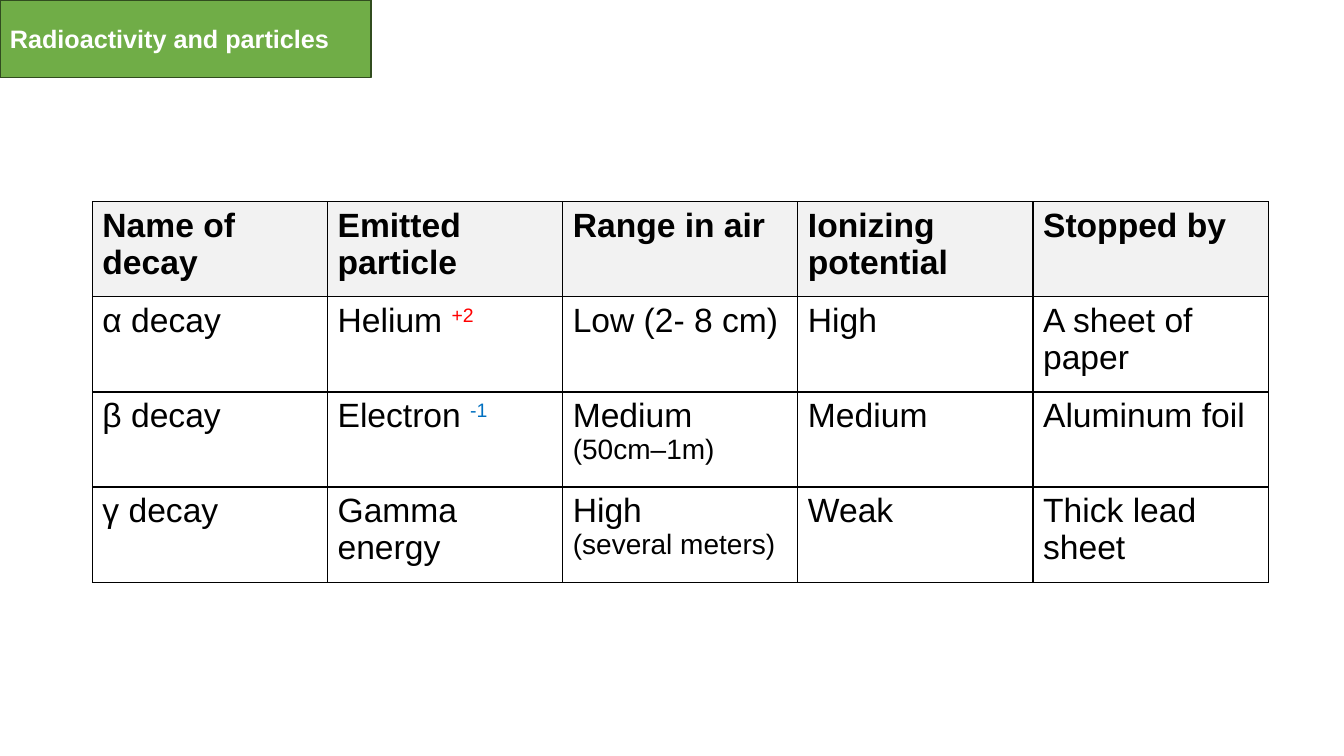
from dataclasses import dataclass

import lxml.etree
import pptx
import pptx.dml.color
import pptx.enum.shapes
import pptx.enum.text
import pptx.oxml
import pptx.oxml.ns
import pptx.slide
import pptx.table
import pptx.text.text
import pptx.util

Pt = pptx.util.Pt
RGBColor = pptx.dml.color.RGBColor

BLACK = RGBColor(0x00, 0x00, 0x00)
WHITE = RGBColor(0xFF, 0xFF, 0xFF)
HEADER_GREY = RGBColor(0xF2, 0xF2, 0xF2)
GREEN = RGBColor(0x70, 0xAD, 0x47)
DARK_GREEN = RGBColor(0x31, 0x4C, 0x1F)
RED = RGBColor(0xFF, 0x00, 0x00)
BLUE = RGBColor(0x00, 0x70, 0xC0)

FONT = "Arial"
COLUMN_WIDTH = 168
ROW_HEIGHT = 68


@dataclass(frozen=True)
class Span:
    text: str
    size: int | None = None
    color: RGBColor | None = None
    superscript: bool = False
    new_line: bool = False


@dataclass(frozen=True)
class Decay:
    name: str
    particle: tuple[Span, ...]
    air_range: tuple[Span, ...]
    ionizing: str
    stopped_by: str

    def cells(self) -> list[tuple[Span, ...]]:
        return [
            (Span(self.name),),
            self.particle,
            self.air_range,
            (Span(self.ionizing),),
            (Span(self.stopped_by),),
        ]


HEADINGS = ("Name of decay", "Emitted particle", "Range in air", "Ionizing potential", "Stopped by")

DECAYS = (
    Decay(
        "α decay",
        (Span("Helium "), Span("+2", color=RED, superscript=True)),
        (Span("Low (2- 8 cm)"),),
        "High",
        "A sheet of paper",
    ),
    Decay(
        "β decay",
        (Span("Electron "), Span("-1", color=BLUE, superscript=True)),
        (Span("Medium "), Span("(50cm–1m)", size=20)),
        "Medium",
        "Aluminum foil",
    ),
    Decay(
        "γ decay",
        (Span("Gamma energy"),),
        (Span("High "), Span("(several meters)", size=20, new_line=True)),
        "Weak",
        "Thick lead sheet",
    ),
)


def write(
    paragraph: pptx.text.text._Paragraph,
    spans: tuple[Span, ...],
    size: int,
    color: RGBColor,
    bold: bool,
) -> None:
    paragraph.font.name = FONT
    paragraph.font.size = Pt(size)
    paragraph.font.bold = bold
    paragraph.font.color.rgb = color
    for span in spans:
        if span.new_line:
            paragraph.add_line_break()
        run = paragraph.add_run()
        run.text = span.text
        if span.size is not None:
            run.font.size = Pt(span.size)
        if span.color is not None:
            run.font.color.rgb = span.color
        if span.superscript:
            run._r.get_or_add_rPr().set("baseline", "30000")


def add_borders(cell: pptx.table._Cell) -> None:
    properties = cell._tc.get_or_add_tcPr()
    for position, side in enumerate(("lnL", "lnR", "lnT", "lnB")):
        border = pptx.oxml.parse_xml(
            f'<a:{side} {pptx.oxml.ns.nsdecls("a")} w="{Pt(1)}">'
            f'<a:solidFill><a:srgbClr val="{BLACK}"/></a:solidFill></a:{side}>'
        )
        properties.insert(position, border)


def add_title(page: pptx.slide.Slide) -> None:
    box = page.shapes.add_shape(
        pptx.enum.shapes.MSO_SHAPE.RECTANGLE, Pt(0), Pt(0), Pt(265), Pt(55.5)
    )
    box.shadow.inherit = False
    box.fill.solid()
    box.fill.fore_color.rgb = GREEN
    box.line.color.rgb = DARK_GREEN
    box.line.width = Pt(1)
    box.text_frame.word_wrap = True
    box.text_frame.vertical_anchor = pptx.enum.text.MSO_ANCHOR.MIDDLE
    paragraph = box.text_frame.paragraphs[0]
    paragraph.alignment = pptx.enum.text.PP_ALIGN.LEFT
    write(paragraph, (Span("Radioactivity and particles"),), 18, WHITE, True)


def add_decay_table(page: pptx.slide.Slide) -> None:
    rows = [[(Span(heading),) for heading in HEADINGS]]
    rows += [decay.cells() for decay in DECAYS]
    table = page.shapes.add_table(
        len(rows),
        len(HEADINGS),
        Pt(66),
        Pt(144),
        Pt(COLUMN_WIDTH * len(HEADINGS)),
        Pt(ROW_HEIGHT * len(rows)),
    ).table
    table.first_row = False
    table.horz_banding = False
    for row_index, row in enumerate(rows):
        is_header = row_index == 0
        for column_index, spans in enumerate(row):
            cell = table.cell(row_index, column_index)
            if is_header:
                cell.fill.solid()
                cell.fill.fore_color.rgb = HEADER_GREY
            else:
                cell.fill.background()
            add_borders(cell)
            write(cell.text_frame.paragraphs[0], spans, 24, BLACK, is_header)


def main() -> None:
    deck = pptx.Presentation()
    deck.slide_width = Pt(960)
    deck.slide_height = Pt(540)
    page = deck.slides.add_slide(deck.slide_layouts[6])
    add_decay_table(page)
    add_title(page)
    deck.save("out.pptx")


if __name__ == "__main__":
    main()
